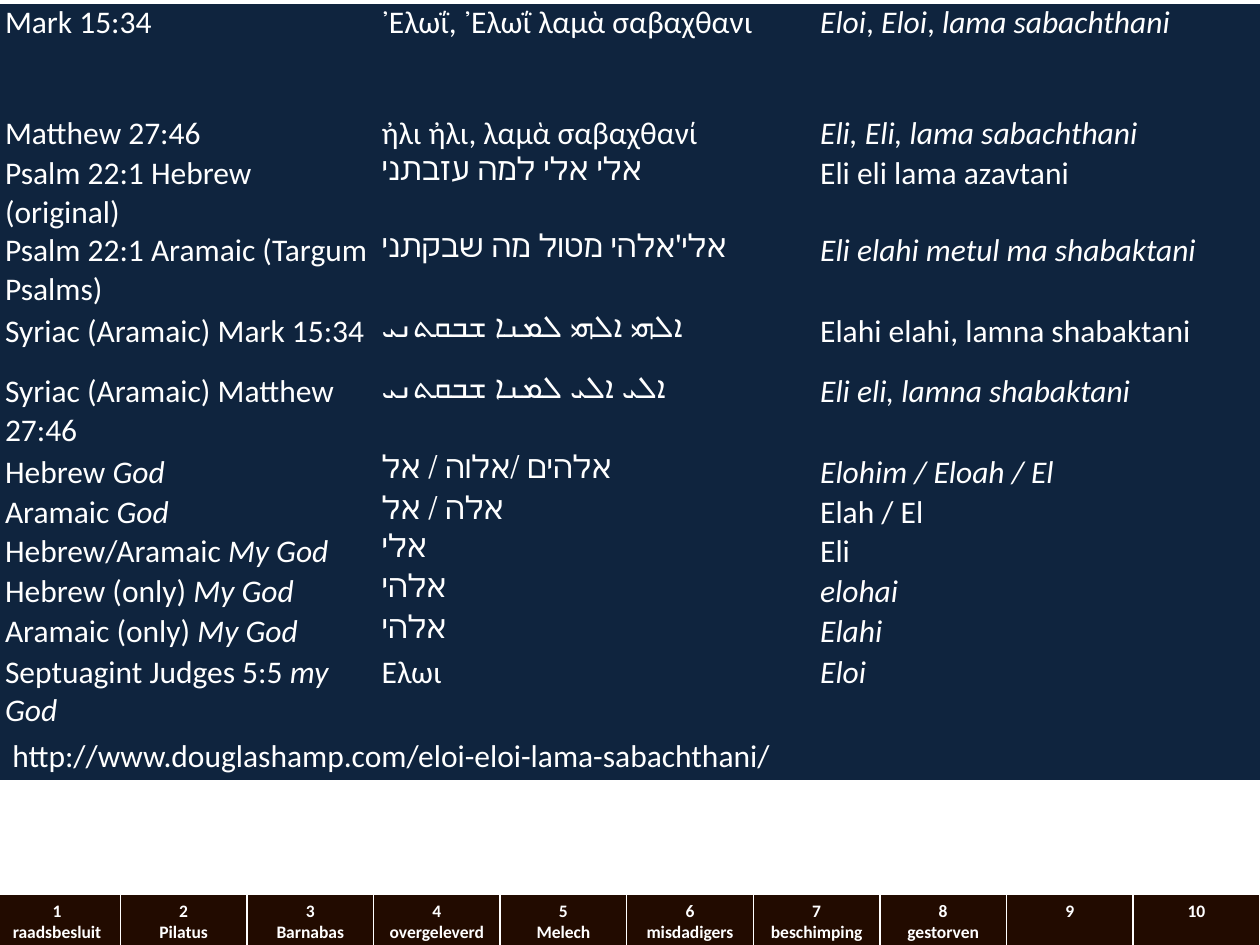
from lxml.etree import SubElement
from pptx import Presentation
from pptx.dml.color import RGBColor
from pptx.enum.shapes import MSO_SHAPE as Shape
from pptx.enum.text import MSO_ANCHOR as Anchor, PP_ALIGN as Align
from pptx.oxml.ns import qn
from pptx.util import Inches, Pt

WHITE = RGBColor(0xFF, 0xFF, 0xFF)
NAVY = RGBColor(0x0F, 0x24, 0x3E)
BROWN = RGBColor(0x22, 0x0B, 0x00)
FONT = "Calibri"

CHAPTERS = ["raadsbesluit", "Pilatus", "Barnabas", "overgeleverd", "Melech",
            "misdadigers", "beschimping", "gestorven", "", ""]
NAV_BORDERS = {"lnL": 1, "lnR": 1, "lnT": 1, "lnB": 3}
NO_BORDERS = dict.fromkeys(NAV_BORDERS, 0)

VERSE_WIDTHS = [2.99, 3.48, 3.57]
# Row height, source, wording, transliteration; asterisks enclose italics
VERSES = [
    (0.88, "Mark 15:34", "᾿Ελωΐ, ᾿Ελωΐ λαμὰ σαβαχθανι",
     "*Eloi*, *Eloi*,* lama sabachthani*"),
    (0.32, "Matthew 27:46", "ἠλι ἠλι, λαμὰ σαβαχθανί", "*Eli, Eli, lama sabachthani*"),
    (0.6, "Psalm 22:1 Hebrew (original)", "אלי אלי למה עזבתני", "Eli eli lama azavtani"),
    (0.64, "Psalm 22:1 Aramaic (Targum Psalms)", "אלי׳אלהי מטול מה שבקתני",
     "*Eli elahi metul ma shabaktani*"),
    (0.48, "Syriac (Aramaic) Mark 15:34", "ܐܠܗܝ ܐܠܗܝ ܠܡܢܐ ܫܒܩܬܢܝ",
     "Elahi elahi, lamna shabaktani"),
    (0.64, "Syriac (Aramaic) Matthew 27:46", "ܐܠܝ ܐܠܝ ܠܡܢܐ ܫܒܩܬܢܝ",
     "*Eli eli, lamna shabaktani*"),
    (0.32, "Hebrew *God*", "אלהים /אלוה / אל", "*Elohim / Eloah / El*"),
    (0.3, "Aramaic *God*", "אלה / אל", "Elah / El"),
    (0.32, "Hebrew/Aramaic *My God*", "אלי", "Eli"),
    (0.32, "Hebrew (only) *My God*", "אלהי", "*elohai*"),
    (0.32, "Aramaic (only) *My God*", "אלהי", "*Elahi*"),
    (0.6, "Septuagint Judges 5:5* my God*", "Ελωι", "*Eloi*"),
]


def style_run(run, size, bold=False, italic=False):
    """Give a run the white slide font."""
    font = run.font
    font.name, font.size, font.bold, font.italic = FONT, Pt(size), bold, italic
    font.color.rgb = WHITE


def style_cell(cell, color, borders):
    """Set the borders of a cell, then its fill."""
    properties = cell._tc.get_or_add_tcPr()
    for side, width in borders.items():
        line = SubElement(properties, qn(f"a:{side}"), w=str(Pt(width)))
        if width:
            paint = SubElement(line, qn("a:solidFill"))
            SubElement(paint, qn("a:srgbClr"), val=str(WHITE))
        else:
            SubElement(line, qn("a:noFill"))
    cell.fill.solid()
    cell.fill.fore_color.rgb = color


def add_grid(slide, left, top, widths, heights):
    """Add a plain table with the given column widths and row heights."""
    frame = slide.shapes.add_table(
        len(heights), len(widths), Inches(left), Inches(top),
        Inches(sum(widths)), Inches(sum(heights)))
    grid = frame.table
    grid.first_row = grid.horz_banding = False
    for column, width in zip(grid.columns, widths):
        column.width = Inches(width)
    for row, height in zip(grid.rows, heights):
        row.height = Inches(height)
    return grid


def add_chapter_bar(slide):
    """Add the numbered chapter bar at the foot of the slide."""
    count = len(CHAPTERS)
    bar = add_grid(slide, -0.05, 7.1, [10.05 / count] * count, [0.43])
    for number, chapter in enumerate(CHAPTERS, start=1):
        cell = bar.cell(0, number - 1)
        style_cell(cell, BROWN, NAV_BORDERS)
        cell.text_frame.text = f"{number}\n{chapter}".strip()
        for paragraph in cell.text_frame.paragraphs:
            paragraph.alignment = Align.CENTER
            style_run(paragraph.runs[0], 10, bold=True)


def add_verse_table(slide):
    """Add the comparison of sources, wordings and transliterations."""
    verses = add_grid(slide, -0.04, 0.03, VERSE_WIDTHS, [row[0] for row in VERSES])
    for row, (_, *wordings) in enumerate(VERSES):
        for column, wording in enumerate(wordings):
            cell = verses.cell(row, column)
            style_cell(cell, NAVY, NO_BORDERS)
            cell.margin_left = Inches(0.08)
            cell.margin_top = cell.margin_right = cell.margin_bottom = 0
            paragraph = cell.text_frame.paragraphs[0]
            for part, words in enumerate(wording.split("*")):
                if words:
                    run = paragraph.add_run()
                    run.text = words
                    style_run(run, 18, italic=part % 2 == 1)


def add_web_address(slide):
    """Add the strip with the web address below the verses."""
    strip = slide.shapes.add_shape(
        Shape.RECTANGLE, 0, Inches(5.79), Inches(10), Inches(0.4))
    strip.shadow.inherit = False
    strip.fill.solid()
    strip.fill.fore_color.rgb = NAVY
    strip.line.fill.background()
    text_frame = strip.text_frame
    text_frame.word_wrap = True
    text_frame.vertical_anchor = Anchor.TOP
    text_frame.text = "http://www.douglashamp.com/eloi-eloi-lama-sabachthani/"
    paragraph = text_frame.paragraphs[0]
    paragraph.alignment = Align.LEFT
    style_run(paragraph.runs[0], 18)


def main():
    """Build and save the slide."""
    presentation = Presentation()
    presentation.slide_width, presentation.slide_height = Inches(10), Inches(7.5)
    slide = presentation.slides.add_slide(presentation.slide_layouts[6])
    add_chapter_bar(slide)
    add_verse_table(slide)
    add_web_address(slide)
    presentation.save("out.pptx")


if __name__ == "__main__":
    main()
